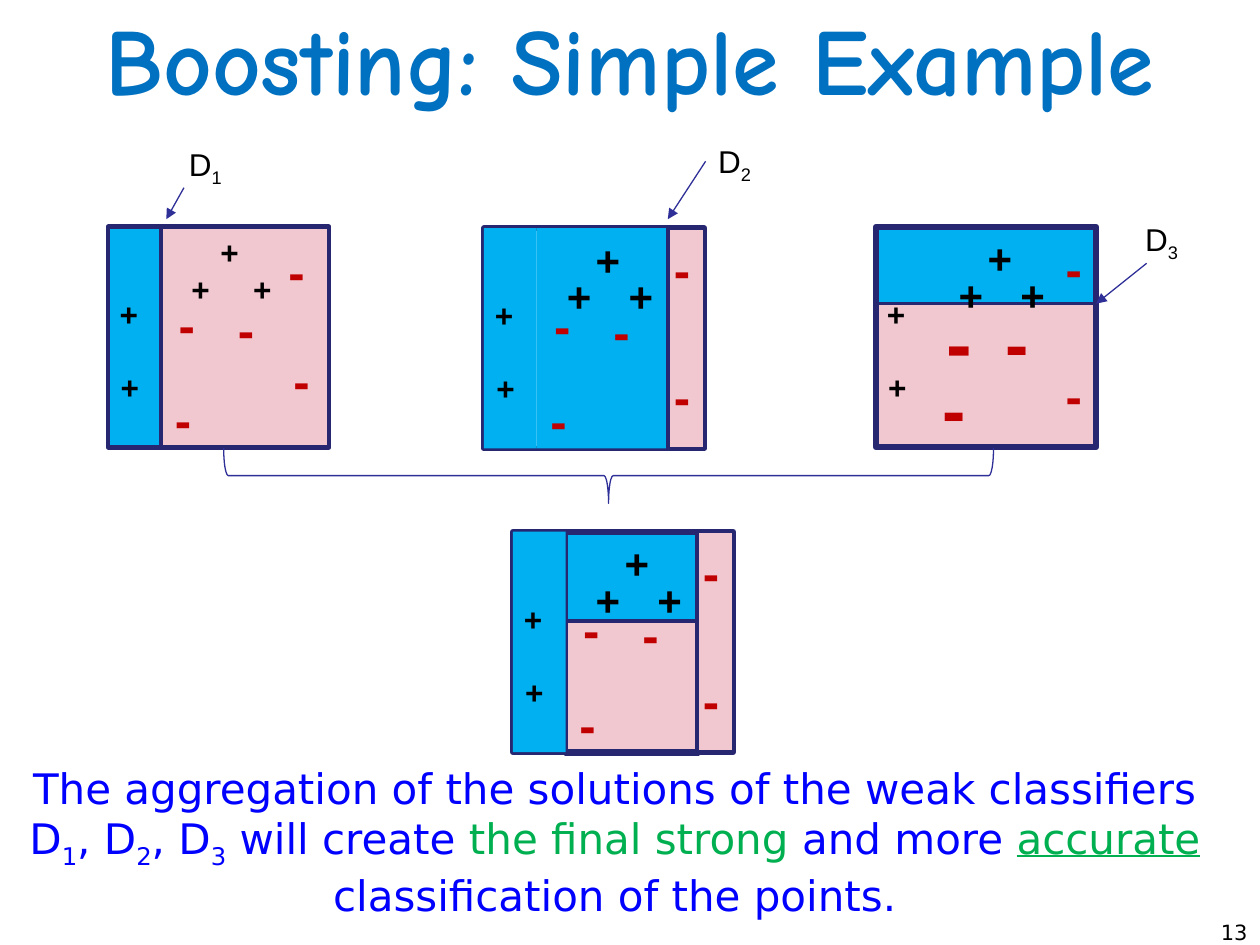
from lxml.etree import SubElement
from pptx import Presentation
from pptx.dml.color import RGBColor
from pptx.enum.shapes import MSO_CONNECTOR, MSO_SHAPE
from pptx.enum.text import MSO_ANCHOR, MSO_AUTO_SIZE, PP_ALIGN
from pptx.oxml.ns import qn
from pptx.util import Inches, Pt

WIDE, HIGH = Inches(10), Inches(7.5)
CELL = WIDE / 100
SIDE = 17.5

BLACK = RGBColor(0x00, 0x00, 0x00)
TITLE = RGBColor(0x00, 0x70, 0xC0)
BLUE = RGBColor(0x00, 0x00, 0xFF)
GREEN = RGBColor(0x00, 0xB0, 0x50)
RED = RGBColor(0xC0, 0x00, 0x00)
SKY = RGBColor(0x00, 0xB0, 0xF0)
PINK = RGBColor(0xF2, 0xC8, 0xD0)
NAVY = RGBColor(0x26, 0x26, 0x71)
INK = RGBColor(0x2F, 0x2F, 0x98)

SIZES = {
    ("+", 18): (3.5, 4), ("+", 24): (4, 5),
    ("-", 28): (3.3, 5.7), ("-", 40): (3.9, 7.7), ("-", 44): (4.1, 8.4),
}
TRIO = [(10.5, 2.9), (7.9, 0), (5.6, 2.9)]
PAIR = [(0, 10.7), (-0.1, 4.9)]
INNER = [(9.3, 5.3), (4.3, 12.4), (4.6, 4.9)]
EDGE = [(14.1, 0.4), (14.1, 10.5)]

FULL = (0, 0, SIDE, SIDE)
LEFT = (0, 0, 4.2, SIDE)
REST = (4.2, 0, 13.3, SIDE)
STRIP = (14.6, 0, 2.9, SIDE)

PANELS = [
    (69.5, 18,
     [((0, 6.1, SIDE, 11.4), PINK, 2), ((0, 0, SIDE, 6.1), SKY, 2),
      (FULL, None, 3.25)],
     [("+", 24, TRIO), ("+", 18, PAIR), ("-", 40, [(9.3, 5.3), (4.3, 10.5)]),
      ("-", 44, [(4.6, 4.9)]), ("-", 28, EDGE)]),
    (38.4, 18.1,
     [(FULL, None, 3.25), (LEFT, SKY, 0), (REST, SKY, 0), (STRIP, PINK, 2)],
     [("+", 24, TRIO), ("+", 18, PAIR), ("-", 28, INNER + EDGE)]),
    (8.6, 18,
     [(FULL, None, 3), (LEFT, SKY, 2), (REST, PINK, 2)],
     [("+", 18, TRIO + PAIR),
      ("-", 28, INNER + [(13.3, 0.7), (13.7, 9.3)])]),
    (40.7, 42.2,
     [((4.2, 7.1, 10.5, 10.6), PINK, 2), ((4.2, 0, 10.5, 7.1), SKY, 2),
      (FULL, None, 3.25), (LEFT, SKY, 0), (STRIP, PINK, 2)],
     [("+", 24, TRIO), ("+", 18, PAIR), ("-", 28, INNER + EDGE)]),
]
LABELS = [("1", 14, 11), ("2", 56, 10.8), ("3", 89.9, 17)]
ARROWS = [
    (14.6, 14.9, 13.2, 17.4),
    (56, 12.8, 53, 17.4),
    (91, 20.9, 87, 24.1),
]
CLAIM = [
    ("The aggregation of the solutions of the weak classifiers D", BLUE),
    ("1", BLUE), (", D", BLUE), ("2", BLUE), (", D", BLUE), ("3", BLUE),
    (" will create ", BLUE), ("the final strong ", GREEN),
    ("and more ", BLUE), ("accurate", GREEN),
    (" classification of the points.", BLUE),
]


def grid(*cells):
    return [round(n * CELL) for n in cells]


def write(shapes, area, runs, size, face="Arial", bold=False,
          align=PP_ALIGN.LEFT, wrap=True):
    box = shapes.add_textbox(*grid(*area))
    frame = box.text_frame
    frame.word_wrap = wrap
    frame.auto_size = MSO_AUTO_SIZE.NONE if wrap else MSO_AUTO_SIZE.SHAPE_TO_FIT_TEXT
    para = frame.paragraphs[0]
    para.alignment = align
    para.font.size = Pt(size)
    para.font.name = face
    para.font.bold = bold
    tints = {tint for _, tint in runs}
    if len(tints) == 1:
        para.font.color.rgb = runs[0][1]
    for text, tint in runs:
        run = para.add_run()
        run.text = text
        if len(tints) > 1:
            run.font.color.rgb = tint
        if text in ("1", "2", "3"):
            run.font._element.set("baseline", "-25000")
        if text == "accurate":
            run.font.underline = True
    return frame


def block(shapes, kind, area, fill, tint, width):
    shape = shapes.add_shape(kind, *grid(*area))
    shape.shadow.inherit = False
    if fill is None:
        shape.fill.background()
    else:
        shape.fill.solid()
        shape.fill.fore_color.rgb = fill
    if width:
        shape.line.color.rgb = tint
        shape.line.width = Pt(width)
    else:
        shape.line.fill.background()
    return shape


def panel(slide, left, top, boxes, marks):
    shapes = slide.shapes.add_group_shape().shapes
    for (x, y, w, h), fill, width in boxes:
        area = (left + x, top + y, w, h)
        block(shapes, MSO_SHAPE.RECTANGLE, area, fill, NAVY, width)
    for sign, size, spots in marks:
        tint = BLACK if sign == "+" else RED
        for x, y in spots:
            area = (left + x, top + y, *SIZES[sign, size])
            write(shapes, area, [(sign, tint)], size, bold=True, wrap=False)


def arrow(slide, ends):
    line = slide.shapes.add_connector(MSO_CONNECTOR.STRAIGHT, *grid(*ends))
    line.line.color.rgb = INK
    line.line.width = Pt(0.75)
    SubElement(line.line._get_or_add_ln(), qn("a:tailEnd"), type="triangle")
    SubElement(line._element.spPr, qn("a:effectLst"))


def main():
    deck = Presentation()
    deck.slide_width, deck.slide_height = WIDE, HIGH
    slide = deck.slides.add_slide(deck.slide_layouts[6])
    shapes = slide.shapes

    head = write(shapes, (0, 0, 100, 9.2), [("Boosting: Simple Example", TITLE)],
                 54, "Comic Neue", True, PP_ALIGN.CENTER)
    head.vertical_anchor = MSO_ANCHOR.MIDDLE
    write(shapes, (93.8, 72.5, 6.2, 2.5), [("13", BLACK)], 12,
          "DejaVu Sans", align=PP_ALIGN.RIGHT)

    for item in PANELS:
        panel(slide, *item)
    for digit, x, y in LABELS:
        write(shapes, (x, y, 4.8, 4), [("D", BLACK), (digit, BLACK)], 18, wrap=False)
    for ends in ARROWS:
        arrow(slide, ends)
    brace = block(shapes, MSO_SHAPE.LEFT_BRACE, (46.1, 7.2, 4.4, 61.1),
                  None, INK, 0.75)
    brace.rotation = 270

    claim = write(shapes, (0.9, 60, 95.8, 13.4), CLAIM, 24, "DejaVu Sans",
                  align=PP_ALIGN.CENTER)
    claim.paragraphs[0].space_before = Pt(4.8)
    deck.save("out.pptx")


if __name__ == "__main__":
    main()
